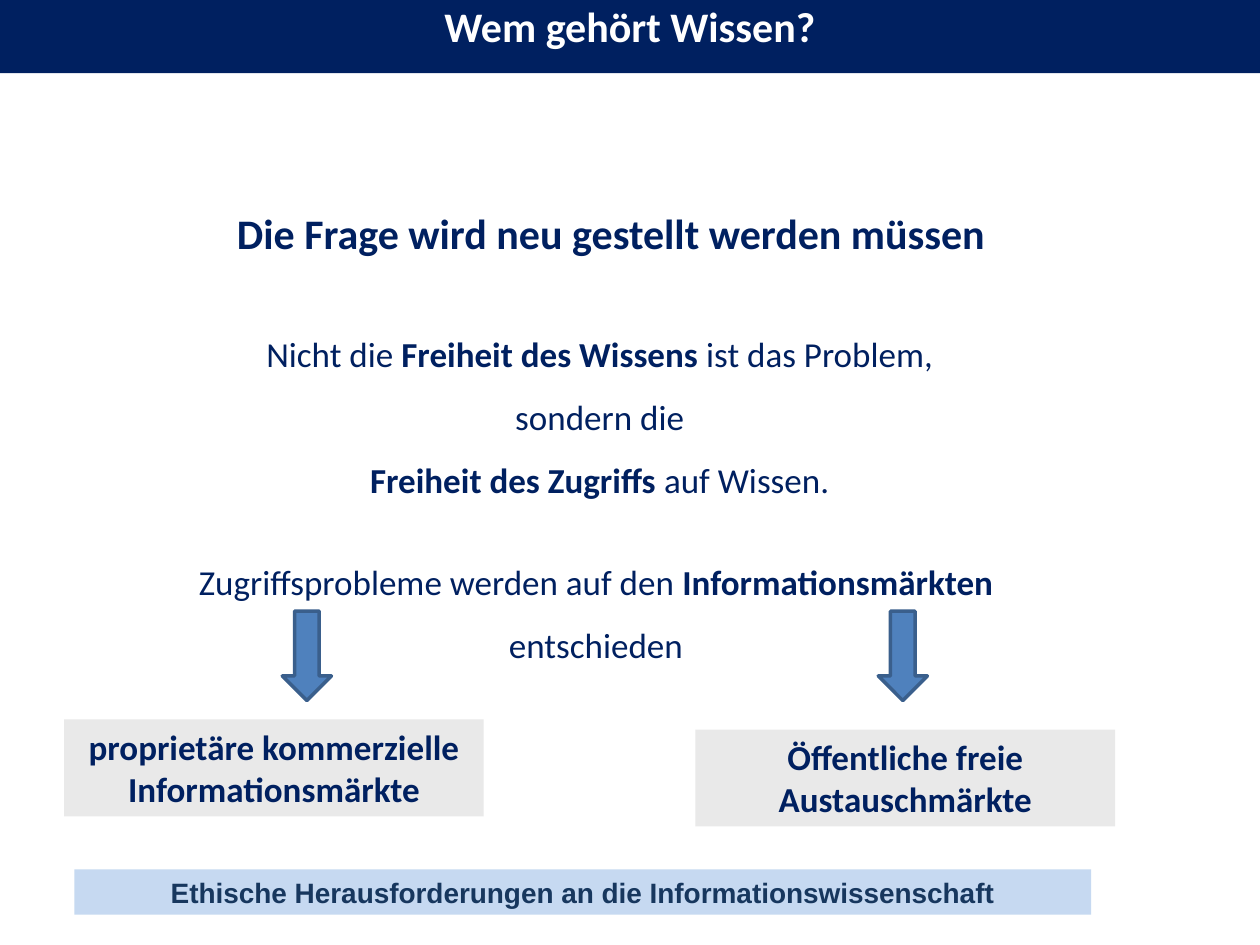
from pptx import Presentation
from pptx.dml.color import RGBColor
from pptx.enum.shapes import MSO_SHAPE as Kind
from pptx.enum.text import MSO_ANCHOR as Anchor, PP_ALIGN as Align
from pptx.util import Inches, Pt

NAVY = "002060"


def paint(form, color):
    form.solid()
    form.fore_color.rgb = RGBColor.from_string(color)


def write(shape, paras, size, color=NAVY, font="Calibri", gap=1.0):
    """Fill centred paragraphs; each is a list of (text, bold) parts."""
    frame = shape.text_frame
    frame.word_wrap = True
    frame.vertical_anchor = Anchor.TOP
    for i, parts in enumerate(paras):
        para = frame.paragraphs[0] if i == 0 else frame.add_paragraph()
        para.alignment = Align.CENTER
        para.line_spacing = gap
        for text, bold in parts:
            run = para.add_run()
            run.text = text
            look = {"name": font, "size": Pt(size), "bold": bold}
            for key, val in look.items():
                setattr(run.font, key, val)
            paint(run.font.fill, color)


deck = Presentation()
deck.slide_width, deck.slide_height = Inches(10), Inches(7.5)
slide = deck.slides.add_slide(deck.slide_layouts[6])
shapes = slide.shapes

# Filled bars and boxes: place, fill, text, size, text colour, font, spacing
bars = [
    ((0.59, 6.9, 8.07, 0.36), "C6D9F1",
     "Ethische Herausforderungen an die Informationswissenschaft",
     16, "17375E", "Arial", 1.0),
    ((0, 0, 10, 0.58), NAVY, "Wem gehört Wissen?",
     24, "FFFFFF", "Calibri", 0.9),
    ((0.51, 5.71, 3.33, 0.77), "E9E9E9",
     "proprietäre kommerzielle Informationsmärkte",
     20, NAVY, "Calibri", 1.0),
    ((5.52, 5.79, 3.33, 0.77), "E9E9E9",
     "Öffentliche freie Austauschmärkte",
     20, NAVY, "Calibri", 1.0),
]
made = []
for place, fill, text, size, color, font, gap in bars:
    bar = shapes.add_shape(Kind.RECTANGLE, *map(Inches, place))
    bar.shadow.inherit = False
    paint(bar.fill, fill)
    bar.line.fill.background()
    write(bar, [[(text, True)]], size, color, font, gap)
    made.append(bar)

# The footer text sits in the middle of its bar, without margins
foot = made[0].text_frame
foot.vertical_anchor = Anchor.MIDDLE
for side in ("left", "top", "right", "bottom"):
    setattr(foot, "margin_" + side, 0)

# Open text
texts = [
    ((1.02, 1.4, 7.66, 0.71), 24,
     [[("Die Frage wird neu gestellt werden müssen", True)]]),
    ((0.93, 2.42, 7.66, 1.62), 20,
     [[("Nicht die ", False), ("Freiheit des Wissens ", True),
       ("ist das Problem,", False)],
      [("sondern die", False)],
      [("Freiheit des Zugriffs ", True), ("auf Wissen.", False)]]),
    ((0.9, 4.23, 7.66, 1.11), 20,
     [[("Zugriffsprobleme werden auf den ", False),
       ("Informationsmärkten", True), (" entschieden", False)]]),
]
for place, size, paras in texts:
    write(shapes.add_textbox(*map(Inches, place)), paras, size, gap=1.5)

# Arrows down to the two markets
for left in (2.24, 6.97):
    arrow = shapes.add_shape(Kind.DOWN_ARROW, Inches(left), Inches(4.85),
                             Inches(0.39), Inches(0.71))
    arrow.shadow.inherit = False
    paint(arrow.fill, "4F81BD")
    paint(arrow.line.fill, "3A5F8C")
    arrow.line.width = Pt(2)

deck.save("out.pptx")
